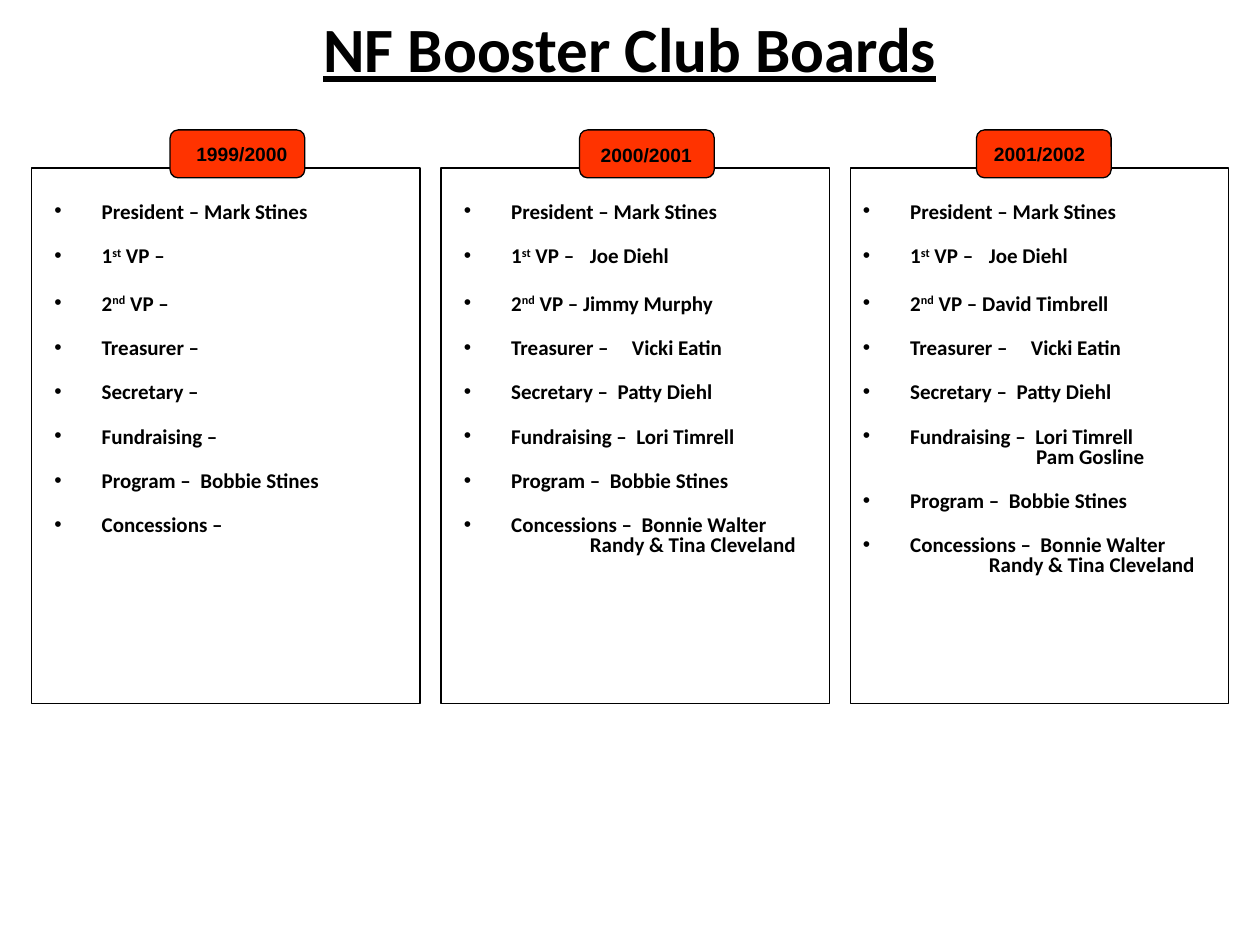
from lxml.etree import SubElement
from pptx import Presentation
from pptx.dml.color import RGBColor
from pptx.enum.shapes import MSO_SHAPE
from pptx.enum.text import MSO_ANCHOR, PP_ALIGN
from pptx.oxml.ns import qn
from pptx.util import Pt

COLORS = {"ink": "000000", "tab": "FF3300"}

# Role (a ^ switches raised text), space before, indent of a second name
ROLES = [
    ("President – ", 0, 0),
    ("1^st^ VP – \t", 13.8, 0),
    ("2^nd^ VP – ", 15.8, 0),
    ("Treasurer –\t", 13.8, 0),
    ("Secretary –  ", 13.8, 0),
    ("Fundraising –  ", 13.8, 99),
    ("Program –  ", 13.8, 0),
    ("Concessions –  ", 13.8, 72),
]
STAND = ["Bonnie Walter", "Randy & Tina Cleveland"]

# Year, frame left and width, tab left, label left and top, list left, names
BOARDS = [
    ("1999/2000", 18, 222, 97.2, 105.1, 77.8, 24,
     [["Mark Stines"], [], [], [], [], [], ["Bobbie Stines"], []]),
    ("2000/2001", 252, 222, 331.2, 336.2, 78.5, 258,
     [["Mark Stines"], ["Joe Diehl"], ["Jimmy Murphy"], ["Vicki Eatin"],
      ["Patty Diehl"], ["Lori Timrell"], ["Bobbie Stines"], STAND]),
    ("2001/2002", 486, 216, 558, 560.9, 77.8, 486,
     [["Mark Stines"], ["Joe Diehl"], ["David Timbrell"], ["Vicki Eatin"],
      ["Patty Diehl"], ["Lori Timrell", "Pam Gosline"], ["Bobbie Stines"],
      STAND]),
]


def tint(name):
    return RGBColor.from_string(COLORS[name])


def add_box(slide, kind, x, y, w, h, fill=None):
    box = slide.shapes.add_shape(kind, Pt(x), Pt(y), Pt(w), Pt(h))
    box.shadow.inherit = False
    box.line.color.rgb = tint("ink")
    box.line.width = Pt(0.75)
    if fill:
        box.fill.solid()
        box.fill.fore_color.rgb = tint(fill)
    else:
        box.fill.background()
    return box


def add_text(slide, x, y, w, h):
    frame = slide.shapes.add_textbox(Pt(x), Pt(y), Pt(w), Pt(h)).text_frame
    frame.word_wrap = True
    return frame


def add_run(para, text, size, face="Calibri", raised=False):
    run = para.add_run()
    run.text = text
    font = run.font
    font.name, font.size, font.bold = face, Pt(size), True
    font.color.rgb = tint("ink")
    if raised:
        font._element.set("baseline", "30000")
    return run


def set_para(para, gap, left, hang=0):
    para.line_spacing = 0.8
    para.space_before = Pt(gap)
    props = para._p.get_or_add_pPr()
    props.set("marL", str(Pt(left)))
    props.set("indent", str(Pt(-hang)))
    return props


def add_role(para, role, gap, name):
    props = set_para(para, gap, 27, 27)
    SubElement(props, qn("a:buFont"), typeface="Arial")
    SubElement(props, qn("a:buChar"), char="•")
    if role.startswith("Treasurer"):
        stops = SubElement(props, qn("a:tabLst"))
        SubElement(stops, qn("a:tab"), pos=str(Pt(96)), algn="l")
    text = (role + name).rstrip()
    for i, part in enumerate(text.split("^")):
        add_run(para, part, 12, raised=i % 2 == 1)


def add_list(slide, left, names):
    frame = add_text(slide, left, 96, 336, 438)
    frame.margin_top = Pt(20)
    for i, ((role, gap, inset), people) in enumerate(zip(ROLES, names)):
        para = frame.add_paragraph() if i else frame.paragraphs[0]
        add_role(para, role, gap, people[0] if people else "")
        # Further names stand under the first
        for name in people[1:]:
            para = frame.add_paragraph()
            set_para(para, 0, inset)
            add_run(para, name, 12)


def add_board(slide, year, left, width, tab, label, top, list_left, names):
    add_box(slide, MSO_SHAPE.RECTANGLE, left, 96, width, 306)
    pill = add_box(slide, MSO_SHAPE.ROUNDED_RECTANGLE, tab, 74.2, 77, 27.4, "tab")
    pill.adjustments[0] = 0.17
    frame = add_text(slide, label, top, 69, 21)
    add_run(frame.paragraphs[0], year, 11, "Arial")
    add_list(slide, list_left, names)


def add_title(slide, text):
    frame = add_text(slide, 36, -18, 648, 90)
    frame.vertical_anchor = MSO_ANCHOR.MIDDLE
    para = frame.paragraphs[0]
    para.alignment = PP_ALIGN.CENTER
    add_run(para, text, 36).font.underline = True


def main():
    deck = Presentation()
    deck.slide_width, deck.slide_height = Pt(720), Pt(540)
    slide = deck.slides.add_slide(deck.slide_layouts[6])
    add_title(slide, "NF Booster Club Boards")
    for board in BOARDS:
        add_board(slide, *board)
    deck.save("out.pptx")


if __name__ == "__main__":
    main()
